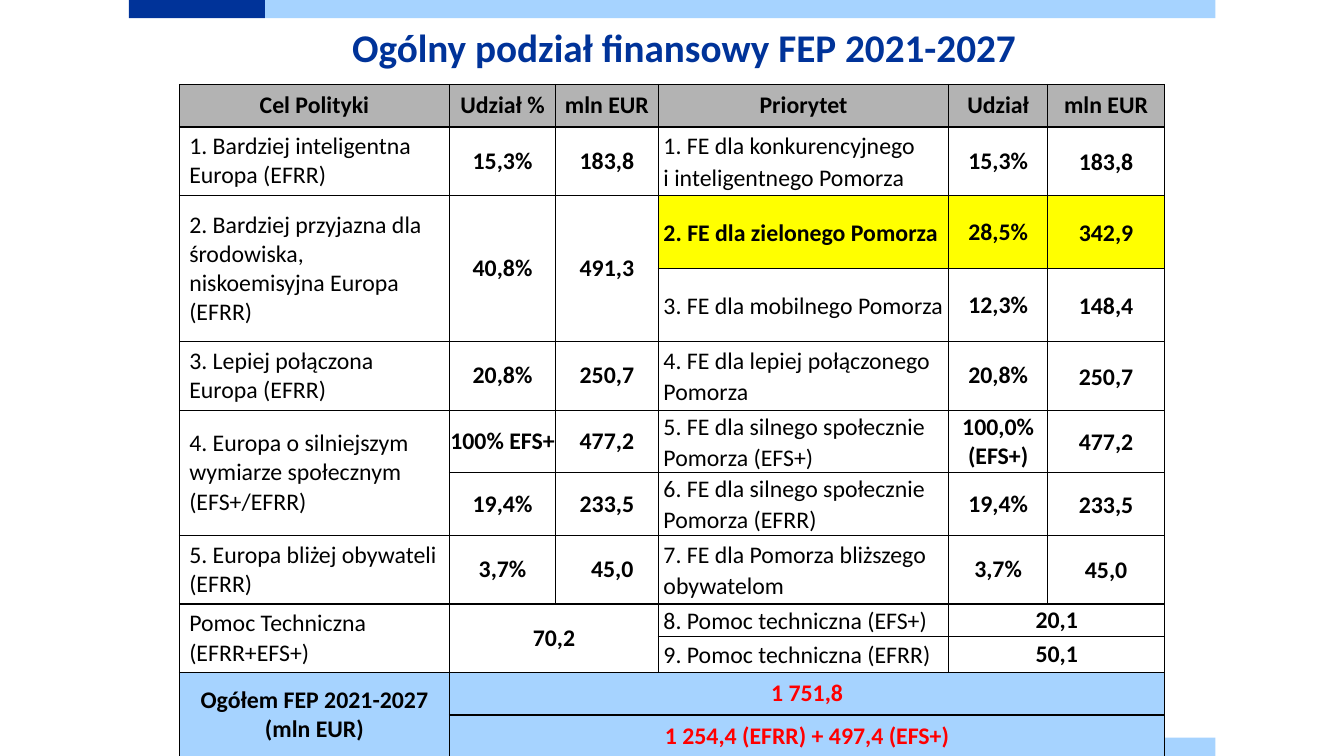
from lxml import etree
from pptx import Presentation
from pptx.dml.color import RGBColor
from pptx.enum.shapes import MSO_SHAPE
from pptx.enum.text import MSO_ANCHOR, PP_ALIGN
from pptx.oxml.ns import qn
from pptx.util import Cm, Pt

RECTANGLE = MSO_SHAPE.RECTANGLE
MIDDLE = MSO_ANCHOR.MIDDLE
LEFT, CENTER = PP_ALIGN.LEFT, PP_ALIGN.CENTER

NAVY = RGBColor(0x00, 0x33, 0x99)
SKY = RGBColor(0xA6, 0xD3, 0xFF)
GREY = RGBColor(0xB3, 0xB3, 0xB3)
YELLOW = RGBColor(0xFF, 0xFF, 0x00)
WHITE = RGBColor(0xFF, 0xFF, 0xFF)
BLACK = RGBColor(0x00, 0x00, 0x00)
RED = RGBColor(0xFF, 0x00, 0x00)

TITLE_ONLY = 5
GOAL, PRIORITY, PRIORITY_AMOUNT = 0, 3, 5
HEADER_ROW, GREEN_ROW, SHORT_ROW, TOTAL_ROW = 0, 2, 7, 10

COLUMN_WIDTHS = [6.81, 2.67, 2.59, 7.32, 2.49, 2.95]
ROW_HEIGHTS = [1.07, 1.72, 1.84, 1.84, 1.72, 1.58, 1.58, 1.72, 0.81, 0.91, 1.07, 1.07]

# None marks a cell covered by a merged neighbour
BUDGET = [
    ["Cel Polityki", "Udział %", "mln EUR", "Priorytet", "Udział", "mln EUR"],
    ["1. Bardziej inteligentna Europa (EFRR)", "15,3%", "183,8",
     "1. FE dla konkurencyjnego \ni inteligentnego Pomorza", "15,3%", "183,8"],
    ["2. Bardziej przyjazna dla środowiska, niskoemisyjna Europa (EFRR)", "40,8%", "491,3",
     "2. FE dla zielonego Pomorza", "28,5%", "342,9"],
    [None, None, None, "3. FE dla mobilnego Pomorza", "12,3%", "148,4"],
    ["3. Lepiej połączona Europa (EFRR)", "20,8%", "250,7",
     "4. FE dla lepiej połączonego Pomorza", "20,8%", "250,7"],
    ["4. Europa o silniejszym wymiarze społecznym (EFS+/EFRR)", "100% EFS+", "477,2",
     "5. FE dla silnego społecznie Pomorza (EFS+)", "100,0%\n(EFS+)", "477,2"],
    [None, "19,4%", "233,5", "6. FE dla silnego społecznie Pomorza (EFRR)", "19,4%", "233,5"],
    ["5. Europa bliżej obywateli (EFRR)", "3,7%", "45,0",
     "7. FE dla Pomorza bliższego obywatelom", "3,7%", "45,0"],
    ["Pomoc Techniczna (EFRR+EFS+)", "70,2", None, "8. Pomoc techniczna (EFS+)", "20,1", None],
    [None, None, None, "9. Pomoc techniczna (EFRR)", "50,1", None],
    ["Ogółem FEP 2021-2027 (mln EUR)", "1 751,8", None, None, None, None],
    [None, "1 254,4 (EFRR) + 497,4 (EFS+)", None, None, None, None],
]

# First and last cell of each merged area, as (row, column)
MERGES = [
    ((2, 0), (3, 0)), ((2, 1), (3, 1)), ((2, 2), (3, 2)), ((5, 0), (6, 0)),
    ((8, 0), (9, 0)), ((8, 1), (9, 2)), ((8, 4), (8, 5)), ((9, 4), (9, 5)),
    ((10, 0), (11, 0)), ((10, 1), (10, 5)), ((11, 1), (11, 5)),
]


class BudgetSlide:
    font_name = "Calibri"
    title_size = Pt(28)
    table_size = Pt(17)
    border_width = Pt(1)

    def __init__(self, presentation):
        self.slide = presentation.slides.add_slide(presentation.slide_layouts[TITLE_ONLY])

    def bar(self, left, top, width, color):
        shape = self.slide.shapes.add_shape(RECTANGLE, Cm(left), Cm(top), Cm(width), Cm(0.46))
        shape.shadow.inherit = False
        shape.fill.solid()
        shape.fill.fore_color.rgb = color
        shape.line.fill.background()

    def add_text(self, paragraph, text, size, color, bold):
        for index, line in enumerate(text.split("\n")):
            if index:
                paragraph.add_line_break()
            run = paragraph.add_run()
            run.text = line
            run.font.name = self.font_name
            run.font.size = size
            run.font.bold = bold
            run.font.color.rgb = color

    def title(self, text, left, top, width, height):
        shape = self.slide.shapes.title
        shape.left, shape.top, shape.width, shape.height = Cm(left), Cm(top), Cm(width), Cm(height)
        shape.text_frame.vertical_anchor = MIDDLE
        paragraph = shape.text_frame.paragraphs[0]
        paragraph.alignment = CENTER
        self.add_text(paragraph, text, self.title_size, NAVY, True)

    def borders(self, cell):
        properties = cell._tc.get_or_add_tcPr()
        for side in ("a:lnL", "a:lnR", "a:lnT", "a:lnB"):
            line = etree.SubElement(properties, qn(side), w=str(self.border_width))
            fill = etree.SubElement(line, qn("a:solidFill"))
            etree.SubElement(fill, qn("a:srgbClr"), val=str(BLACK))

    def cell(self, cell, text, row, column):
        is_header, is_total = row == HEADER_ROW, row >= TOTAL_ROW
        is_green = row == GREEN_ROW and column >= PRIORITY
        is_body = not is_header and not is_total
        is_label = is_body and column in (GOAL, PRIORITY)

        self.borders(cell)
        cell.fill.solid()
        cell.fill.fore_color.rgb = (GREY if is_header else SKY if is_total
                                    else YELLOW if is_green else WHITE)
        if text is None:
            return

        cell.vertical_anchor = MIDDLE
        side, edge = 0, 0
        if is_body and column == GOAL:
            side, edge = 0.25, 0.13
        elif is_body and column in (PRIORITY, PRIORITY_AMOUNT):
            side = 0.13
        cell.margin_left = cell.margin_right = Cm(side)
        cell.margin_top = cell.margin_bottom = Cm(edge)
        if (row, column) == (SHORT_ROW, 2):
            cell.margin_left = Cm(0.27)  # lines up the shorter amount

        paragraph = cell.text_frame.paragraphs[0]
        paragraph.alignment = LEFT if is_label else CENTER
        if is_body and column in (PRIORITY, PRIORITY_AMOUNT):
            paragraph.line_spacing = 1.07
        color = RED if is_total and column != GOAL else BLACK
        self.add_text(paragraph, text, self.table_size, color, not is_label or is_green)

    def table(self, left, top):
        frame = self.slide.shapes.add_table(
            len(ROW_HEIGHTS), len(COLUMN_WIDTHS), Cm(left), Cm(top),
            Cm(sum(COLUMN_WIDTHS)), Cm(sum(ROW_HEIGHTS)))
        table = frame.table
        table.first_row = table.horz_banding = False
        for column, width in zip(table.columns, COLUMN_WIDTHS):
            column.width = Cm(width)
        for row, height in zip(table.rows, ROW_HEIGHTS):
            row.height = Cm(height)
        for first, last in MERGES:
            table.cell(*first).merge(table.cell(*last))
        for row, texts in enumerate(BUDGET):
            for column, text in enumerate(texts):
                self.cell(table.cell(row, column), text, row, column)


def main():
    presentation = Presentation()
    presentation.slide_width, presentation.slide_height = Cm(33.87), Cm(19.05)
    budget = BudgetSlide(presentation)

    # Colour bars at the top and bottom edges
    budget.bar(3.25, 0, 3.43, NAVY)
    budget.bar(6.68, 0, 23.95, SKY)
    budget.bar(27.2, 18.59, 3.43, SKY)

    # Heading and budget table
    budget.title("Ogólny podział finansowy FEP 2021-2027", 5.26, 0, 23.95, 2.34)
    budget.table(4.52, 2.13)

    presentation.save("out.pptx")


if __name__ == "__main__":
    main()
